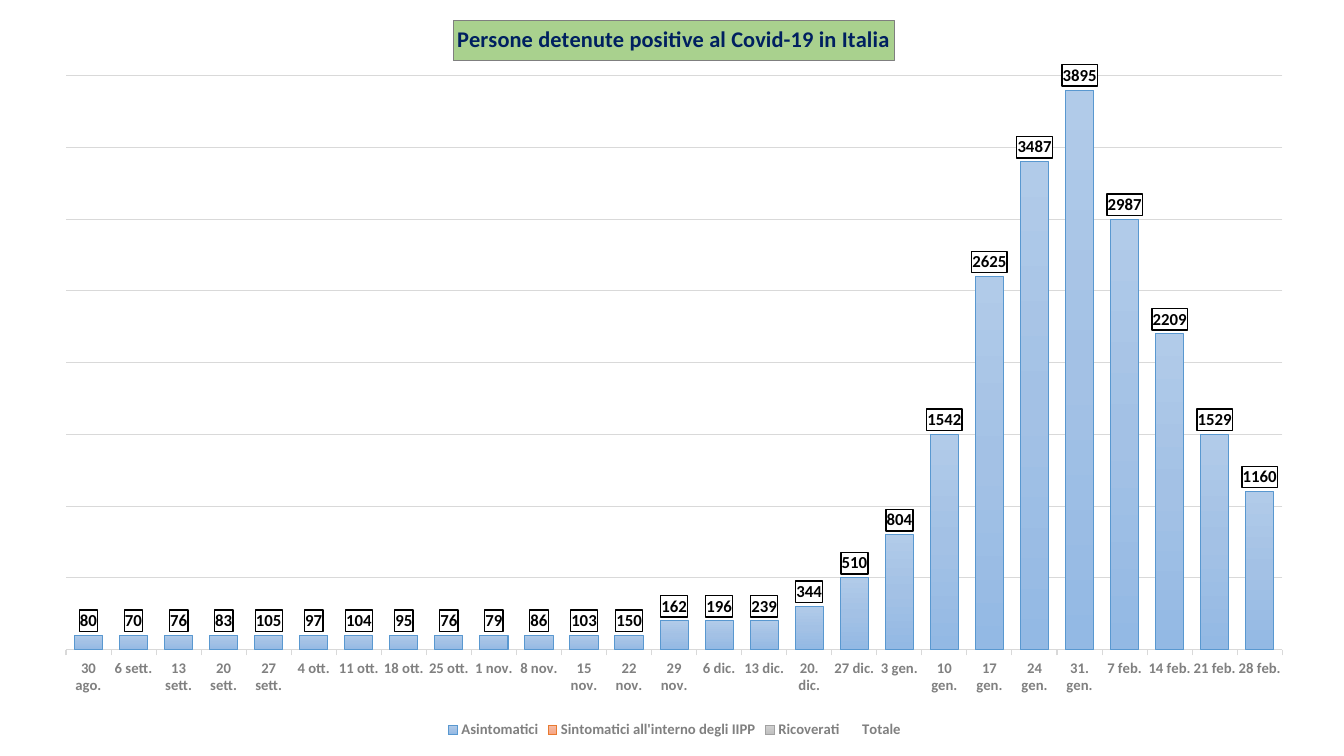
from pptx import Presentation
from pptx.chart.data import CategoryChartData
from pptx.dml.color import RGBColor
from pptx.enum import chart as ce
from pptx.oxml import parse_xml
from pptx.oxml.ns import nsdecls, qn
from pptx.util import Cm, Pt
from copy import deepcopy


def style(font, size, color):
    font.name, font.size, font.bold = "Calibri", Pt(size), True
    font.color.rgb = RGBColor.from_string(color)


def place(parent, index, **spots):
    """Give a chart part a manual layout, in fractions of the chart."""
    for old in parent.findall(qn("c:layout")):
        parent.remove(old)
    modes = '<c:xMode val="edge"/><c:yMode val="edge"/>'
    if "w" in spots:
        modes = '<c:layoutTarget val="inner"/>' + modes
    sizes = "".join(f'<c:{key} val="{val}"/>' for key, val in spots.items())
    parent.insert(index, parse_xml(
        f'<c:layout {nsdecls("c")}><c:manualLayout>{modes}{sizes}'
        '</c:manualLayout></c:layout>'))


days = ["30 ago.", "6 sett.", "13 sett.", "20 sett.", "27 sett.", "4 ott.", "11 ott.",
        "18 ott.", "25 ott.", "1 nov.", "8 nov.", "15 nov.", "22 nov.", "29 nov.",
        "6 dic.", "13 dic.", "20. dic.", "27 dic.", "3 gen.", "10 gen.", "17 gen.",
        "24 gen.", "31. gen.", "7 feb.", "14 feb.", "21 feb.", "28 feb."]
totals = [80, 70, 76, 83, 105, 97, 104, 95, 76, 79, 86, 103, 150, 162, 196, 239, 344,
          510, 804, 1542, 2625, 3487, 3895, 2987, 2209, 1529, 1160]
healthy = [100] * 13 + [200] * 3 + [300, 500, 800, 1500, 2600, 3400, 3900,
                                    3000, 2200, 1500, 1100]
none = [0] * len(days)

data = CategoryChartData()
data.categories = days
for name, vals in [("Asintomatici", healthy),
                   ("Sintomatici all'interno degli IIPP", none),
                   ("Ricoverati", none), ("Totale", totals)]:
    data.add_series(name, vals)

deck = Presentation()
deck.slide_width, deck.slide_height = Cm(33.87), Cm(19.05)
slide = deck.slides.add_slide(deck.slide_layouts[6])
chart = slide.shapes.add_chart(ce.XL_CHART_TYPE.COLUMN_STACKED, Cm(1.04), Cm(0),
                               Cm(31.93), Cm(18.72), data).chart
chart.font.name, chart.font.size = "Calibri", Pt(10)

# Title, with slightly widened letter spacing
chart.has_title = True
title = chart.chart_title
para = title.text_frame.paragraphs[0]
para.text = "Persone detenute positive al Covid-19 in Italia"
style(para.font, 16, "002060")
para._p.find(".//" + qn("a:defRPr")).set("spc", "20")
title.format.fill.solid()
title.format.fill.fore_color.rgb = RGBColor.from_string("A9D18E")
title.format.line.color.rgb = RGBColor.from_string("7F7F7F")
title.format.line.width = Pt(0.75)
place(title._element, 1, x=0.325, y=0.027)

# Axes and legend
grey = RGBColor.from_string("D9D9D9")
cats, scale = chart.category_axis, chart.value_axis
style(cats.tick_labels.font, 10.5, "808080")
cats.major_tick_mark = ce.XL_TICK_MARK.OUTSIDE
scale.minimum_scale, scale.maximum_scale, scale.major_unit = 0, 4000, 500
scale.has_major_gridlines = True
scale.visible = False
for line in (cats.format.line, scale.major_gridlines.format.line):
    line.color.rgb, line.width = grey, Pt(0.75)
chart.has_legend = True
chart.legend.position = ce.XL_LEGEND_POSITION.BOTTOM
chart.legend.include_in_layout = False
style(chart.legend.font, 10.5, "808080")
place(chart._chartSpace.chart.plotArea, 0, x=0.0195, y=0.102, w=0.96, h=0.7725)

# Columns
plot = chart.plots[0]
plot.gap_width, plot.overlap, plot.vary_by_categories = 60, 100, False
*stacks, total = plot.series
looks = [(("B1CBE9", "A3C1E5", "93B9E4"), "5998D0"),
         (("F7BDA5", "F5B196", "F8A582"), "E87A30"),
         (("D2D2D2", "C8C8C8", "C0C0C0"), "A1A1A1")]
for stack, (shades, edge) in zip(stacks, looks):
    fill = stack.format.fill
    fill.gradient()
    fill.gradient_angle = 270
    stops = stack._element.find(".//" + qn("a:gsLst"))
    stops.append(deepcopy(stops[-1]))
    for step, (stop, shade) in enumerate(zip(fill.gradient_stops, shades)):
        stop.color.rgb = RGBColor.from_string(shade)
        stop.position = step / 2
    stack.format.line.color.rgb = RGBColor.from_string(edge)
    stack.format.line.width = Pt(0.75)

# Invisible total columns carry the boxed labels
total.format.fill.background()
total.format.line.fill.background()
labels = total.data_labels
labels.show_value = True
labels.position = ce.XL_LABEL_POSITION.INSIDE_BASE
style(labels.font, 12, "000000")
labels._element.find(qn("c:txPr")).addprevious(parse_xml(
    f'<c:spPr {nsdecls("c", "a")}><a:solidFill><a:srgbClr val="FFFFFF"/></a:solidFill>'
    '<a:ln w="12700"><a:solidFill><a:srgbClr val="000000"/></a:solidFill></a:ln></c:spPr>'))

deck.save("out.pptx")
